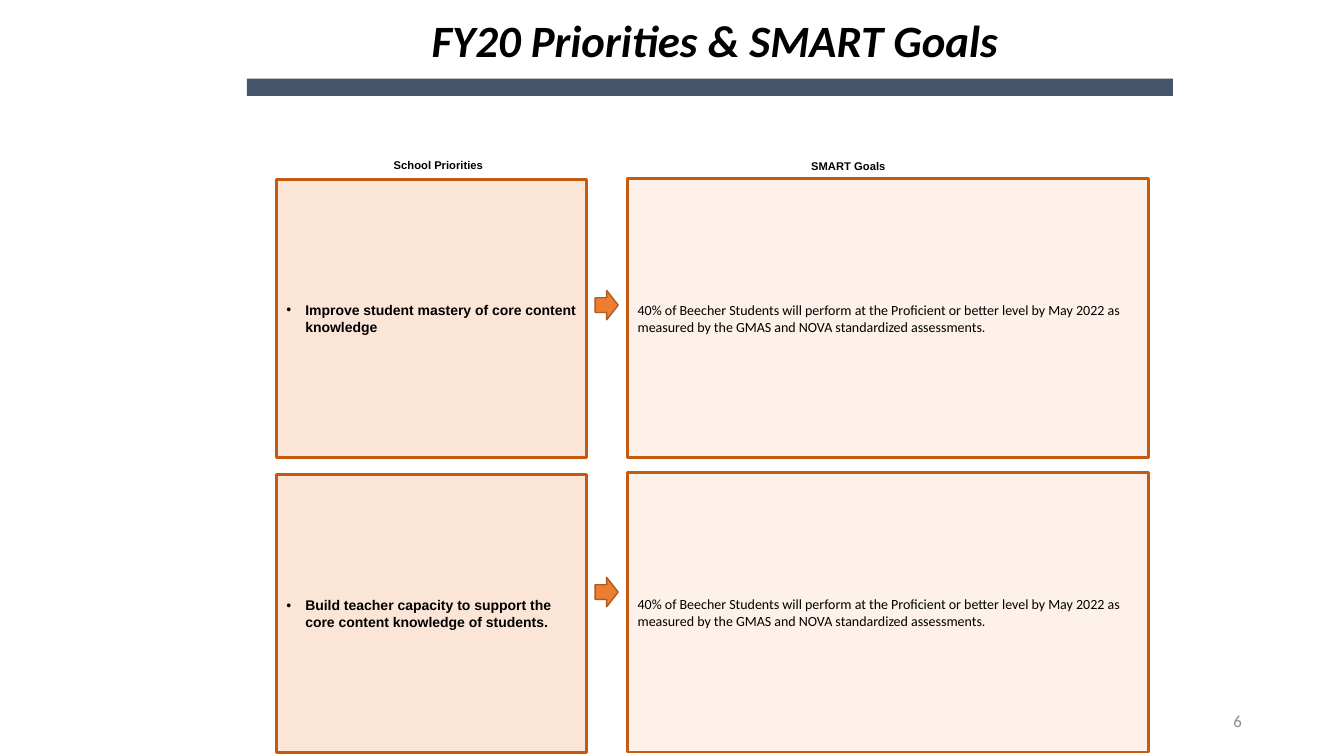
from dataclasses import dataclass

from lxml import etree
from pptx import Presentation
from pptx import util as u
from pptx.dml.color import RGBColor
from pptx.enum import shapes, text
from pptx.oxml import ns


@dataclass(frozen=True)
class Theme:
    heading_font: str = "Calibri"
    label_font: str = "Arial"
    ink: str = "000000"
    muted: str = "8C8C8C"
    bar: str = "44546A"
    border: str = "C55A11"
    priority_fill: str = "FBE5D6"
    goal_fill: str = "FDF1E9"
    arrow_fill: str = "ED7D31"
    arrow_line: str = "AF5C24"
    title_size: float = 32
    body_size: float = 10
    label_size: float = 8
    number_size: float = 12


class SlideBuilder:
    """Holds the theme and the slide being built."""

    def __init__(self, slide, theme):
        self.slide = slide
        self.theme = theme

    def place(self, shape, box):
        shape.left, shape.top, shape.width, shape.height = (u.Cm(n) for n in box)

    def paint(self, shape, fill, line=None, width=2):
        shape.fill.solid()
        shape.fill.fore_color.rgb = RGBColor.from_string(fill)
        if line:
            shape.line.color.rgb = RGBColor.from_string(line)
            shape.line.width = u.Pt(width)
        else:
            shape.line.fill.background()

    def set_text(self, shape, words, size, font, align=text.PP_ALIGN.LEFT,
                 anchor=text.MSO_ANCHOR.TOP, color=None, bold=False, italic=False):
        frame = shape.text_frame
        frame.word_wrap = True
        frame.auto_size = text.MSO_AUTO_SIZE.NONE
        frame.vertical_anchor = anchor
        paragraph = frame.paragraphs[0]
        paragraph.alignment = align
        paragraph.space_before = u.Pt(0)
        run = paragraph.add_run()
        run.text = words
        run.font.name, run.font.size = font, u.Pt(size)
        run.font.bold, run.font.italic = bold, italic
        run.font.color.rgb = RGBColor.from_string(color or self.theme.ink)
        return paragraph

    def title(self, words, box):
        shape = self.slide.shapes.title
        self.place(shape, box)
        self.set_text(shape, words, self.theme.title_size, self.theme.heading_font,
                      text.PP_ALIGN.CENTER, bold=True, italic=True)

    def shape(self, kind, box, fill, line=None, width=2):
        shape = self.slide.shapes.add_shape(kind, *(u.Cm(n) for n in box))
        shape.shadow.inherit = False
        self.paint(shape, fill, line, width)
        return shape

    def label(self, words, box, **style):
        shape = self.slide.shapes.add_textbox(*(u.Cm(n) for n in box))
        self.set_text(shape, words, **style)

    def heading(self, words, box):
        self.label(words, box, size=self.theme.label_size, font=self.theme.label_font,
                   align=text.PP_ALIGN.CENTER, bold=True)

    def priority(self, placeholder, words, box):
        self.place(placeholder, box)
        self.paint(placeholder, self.theme.priority_fill, self.theme.border)
        paragraph = self.set_text(placeholder, words, self.theme.body_size,
                                  self.theme.label_font, anchor=text.MSO_ANCHOR.MIDDLE,
                                  bold=True)
        # Hanging bullet
        properties = paragraph._p.get_or_add_pPr()
        indent = u.Cm(0.48)
        properties.set("marL", str(indent))
        properties.set("indent", str(-indent))
        etree.SubElement(properties, ns.qn("a:buFont")).set("typeface", "Arial")
        etree.SubElement(properties, ns.qn("a:buChar")).set("char", "•")

    def goal(self, words, box):
        shape = self.shape(shapes.MSO_SHAPE.RECTANGLE, box,
                           self.theme.goal_fill, self.theme.border)
        self.set_text(shape, words, self.theme.body_size, self.theme.heading_font,
                      anchor=text.MSO_ANCHOR.MIDDLE)

    def arrow(self, box):
        self.shape(shapes.MSO_SHAPE.RIGHT_ARROW, box,
                   self.theme.arrow_fill, self.theme.arrow_line, 1)


GOAL = ("40% of Beecher Students will perform at the Proficient or better level by "
        "May 2022 as measured by the GMAS and NOVA standardized assessments.")
# Priority, then the tops of its box, its goal and its arrow
ROWS = [
    ("Improve student mastery of core content knowledge", 4.52, 4.5, 7.32),
    ("Build teacher capacity to support the core content knowledge of students.",
     11.96, 11.91, 14.55),
]


def main():
    presentation = Presentation()
    presentation.slide_width, presentation.slide_height = u.Cm(33.87), u.Cm(19.05)
    two_content = presentation.slide_layouts[3]
    slide = presentation.slides.add_slide(two_content)
    theme = Theme()
    builder = SlideBuilder(slide, theme)

    # Title and bar
    builder.shape(shapes.MSO_SHAPE.RECTANGLE, (6.22, 1.98, 23.34, 0.44), theme.bar)
    builder.title("FY20 Priorities & SMART Goals", (6.68, 0.2, 22.68, 1.63))

    # Column headings
    builder.heading("School Priorities", (9.4, 3.86, 3.3, 0.6))
    builder.heading("SMART Goals", (19.74, 3.89, 3.28, 0.6))

    # Each priority points to its goal
    bodies = [slide.placeholders[1], slide.placeholders[2]]
    for body, (priority, priority_top, goal_top, arrow_top) in zip(bodies, ROWS):
        builder.goal(GOAL, (15.82, goal_top, 13.13, 7.04))
        builder.priority(body, priority, (6.96, priority_top, 7.82, 7.01))
        builder.arrow((15, arrow_top, 0.58, 0.74))

    # Slide number
    builder.label("6", (23.93, 17.65, 7.62, 1.02), size=theme.number_size,
                  font=theme.heading_font, align=text.PP_ALIGN.RIGHT,
                  anchor=text.MSO_ANCHOR.MIDDLE, color=theme.muted)

    presentation.save("out.pptx")


if __name__ == "__main__":
    main()
